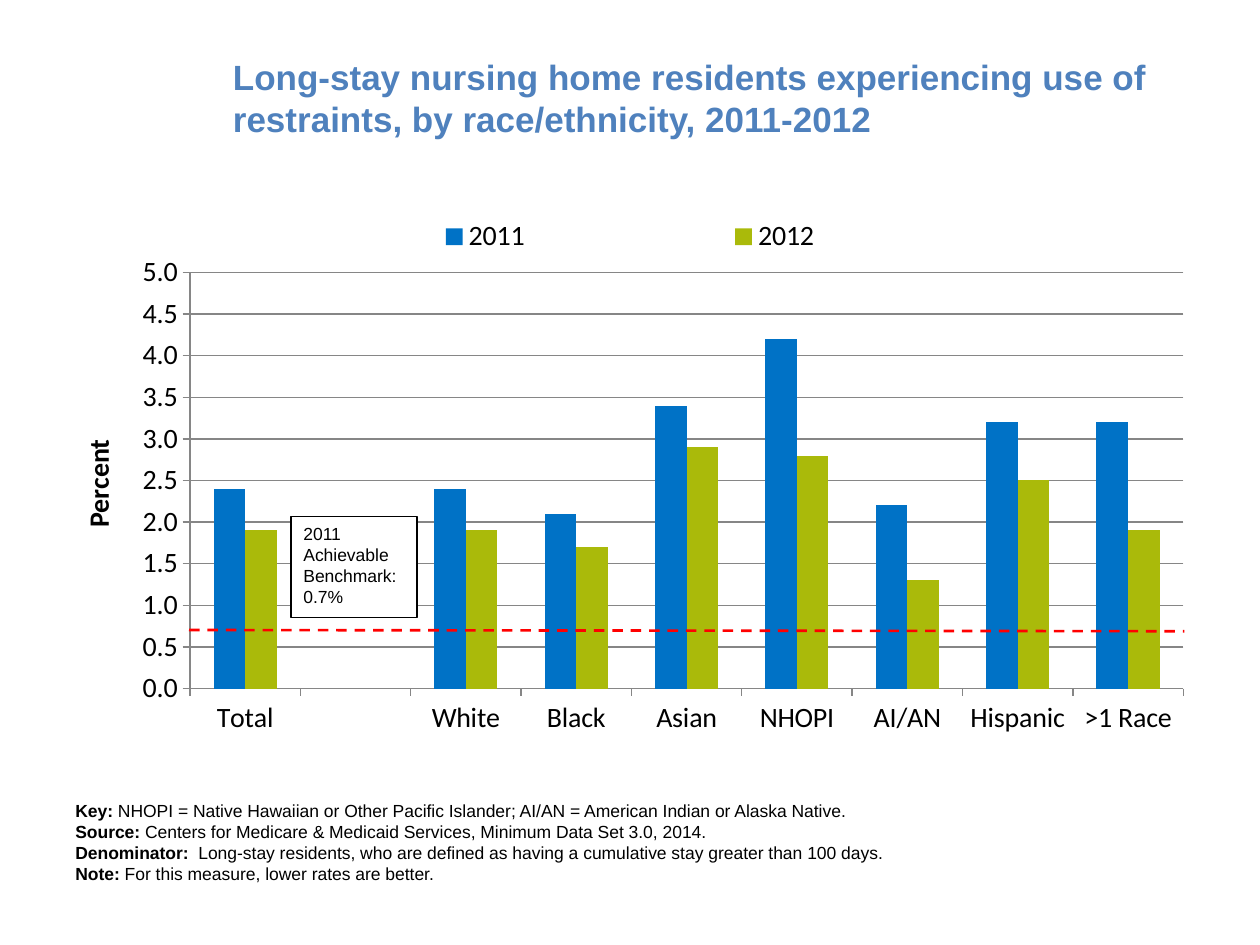
import dataclasses
import typing

import lxml.etree
import pptx
import pptx.chart.data
import pptx.dml.color
import pptx.enum.chart
import pptx.enum.dml
import pptx.enum.shapes
import pptx.enum.text
import pptx.oxml
import pptx.oxml.ns
import pptx.util

PX = 9144  # EMU per px, 100 px to the inch
COLORS = {
    "title": "4F81BD", "text": "000000", "paper": "FFFFFF", "grid": "868686",
    "2011": "0072C6", "2012": "AABA0A", "benchmark": "FF0000",
}
AXIS_FONT = {"name": "Calibri", "size": pptx.util.Pt(16), "bold": False}
TITLE_FONT = {"name": "Arial", "size": pptx.util.Pt(20), "bold": True}
NOTE_FONT = {"name": "Arial", "size": pptx.util.Pt(10), "bold": False}

CATEGORIES = ["Total", "", "White", "Black", "Asian", "NHOPI", "AI/AN", "Hispanic", ">1 Race"]
SERIES = {
    "2011": [2.4, None, 2.4, 2.1, 3.4, 4.2, 2.2, 3.2, 3.2],
    "2012": [1.9, None, 1.9, 1.7, 2.9, 2.8, 1.3, 2.5, 1.9],
}


@dataclasses.dataclass
class Area:
    left: int
    top: int
    width: int
    height: int

    def emu(self) -> list[int]:
        return [value * PX for value in dataclasses.astuple(self)]


@dataclasses.dataclass
class Note:
    label: str
    body: str


NOTES = [
    Note("Key:", " NHOPI = Native Hawaiian or Other Pacific Islander; "
         "AI/AN = American Indian or Alaska Native."),
    Note("Source: ", "Centers for Medicare & Medicaid Services, Minimum Data Set 3.0, 2014."),
    Note("Denominator:", "  Long-stay residents, who are defined as having "
         "a cumulative stay greater than 100 days."),
    Note("Note:", " For this measure, lower rates are better."),
]


def color(name: str) -> pptx.dml.color.RGBColor:
    return pptx.dml.color.RGBColor.from_string(COLORS[name])


def set_font(font: typing.Any, values: dict, color_name: str = "text") -> None:
    for key, value in values.items():
        setattr(font, key, value)
    font.color.rgb = color(color_name)


def set_line(line: typing.Any, color_name: str, points: float) -> None:
    line.color.rgb = color(color_name)
    line.width = pptx.util.Pt(points)


def add_span(para: typing.Any, text: str, values: dict, color_name: str = "text") -> None:
    span = para.add_run()
    span.text = text
    set_font(span.font, values, color_name)


def add_box(page: typing.Any, area: Area) -> typing.Any:
    box = page.shapes.add_textbox(*area.emu())
    box.text_frame.word_wrap = True
    return box


def make_layout(**places: float) -> typing.Any:
    """Manual chart layout, in fractions of the chart's size."""
    modes = {"xMode": "edge", "yMode": "edge"}
    if "w" in places:
        modes = {"layoutTarget": "inner", **modes}
    items = "".join(f'<c:{key} val="{value}"/>' for key, value in {**modes, **places}.items())
    return pptx.oxml.parse_xml(
        f'<c:layout {pptx.oxml.ns.nsdecls("c")}><c:manualLayout>{items}'
        "</c:manualLayout></c:layout>")


def place(element: typing.Any, layout: typing.Any, after: str = "") -> None:
    """Put the layout first in the element, or after the named child."""
    for old in element.findall(pptx.oxml.ns.qn("c:layout")):
        element.remove(old)
    if after:
        element.find(pptx.oxml.ns.qn(after)).addnext(layout)
    else:
        element.insert(0, layout)


def add_rates_chart(page: typing.Any, area: Area) -> None:
    data = pptx.chart.data.CategoryChartData(number_format="0.0")
    data.categories = CATEGORIES
    for name, values in SERIES.items():
        data.add_series(name, values)
    chart = page.shapes.add_chart(
        pptx.enum.chart.XL_CHART_TYPE.COLUMN_CLUSTERED, *area.emu(), data).chart
    set_font(chart.font, NOTE_FONT)
    chart.has_title = False

    # Columns
    plot = chart.plots[0]
    plot.gap_width = 150
    plot.overlap = 0
    plot.vary_by_categories = False
    for series in plot.series:
        series.format.fill.solid()
        series.format.fill.fore_color.rgb = color(series.name)
    place(chart.element.chart.plotArea, make_layout(x=0.112, y=0.131, w=0.876, h=0.768))

    # Legend
    chart.has_legend = True
    legend = chart.legend
    legend.position = pptx.enum.chart.XL_LEGEND_POSITION.TOP
    legend.include_in_layout = False
    set_font(legend.font, AXIS_FONT)
    legend_layout = make_layout(x=0.16, y=0.02, w=0.68, h=0.09)
    target = legend_layout[0].find(pptx.oxml.ns.qn("c:layoutTarget"))
    legend_layout[0].remove(target)
    place(legend._element, legend_layout, "c:legendPos")

    # Axes
    for axis in (chart.category_axis, chart.value_axis):
        set_font(axis.tick_labels.font, AXIS_FONT)
        set_line(axis.format.line, "grid", 0.75)
        axis.major_tick_mark = pptx.enum.chart.XL_TICK_MARK.OUTSIDE
        axis.minor_tick_mark = pptx.enum.chart.XL_TICK_MARK.NONE
    axis = chart.value_axis
    limits = {"minimum_scale": 0, "maximum_scale": 5, "major_unit": 0.5}
    for key, value in limits.items():
        setattr(axis, key, value)
    axis.tick_labels.number_format = "0.0"
    axis.tick_labels.number_format_is_linked = False
    axis.has_major_gridlines = True
    set_line(axis.major_gridlines.format.line, "grid", 0.75)
    para = axis.axis_title.text_frame.paragraphs[0]
    add_span(para, "Percent", {**AXIS_FONT, "bold": True})
    place(axis.axis_title._element, make_layout(x=0.01, y=0.43), "c:tx")


def add_benchmark(page: typing.Any, area: Area) -> None:
    box = page.shapes.add_shape(pptx.enum.shapes.MSO_SHAPE.RECTANGLE, *area.emu())
    box.shadow.inherit = False
    box.fill.solid()
    box.fill.fore_color.rgb = color("paper")
    set_line(box.line, "text", 0.75)
    box.text_frame.word_wrap = True
    box.text_frame.vertical_anchor = pptx.enum.text.MSO_ANCHOR.TOP
    para = box.text_frame.paragraphs[0]
    para.alignment = pptx.enum.text.PP_ALIGN.LEFT
    add_span(para, "2011 Achievable Benchmark: 0.7%", NOTE_FONT)

    # Dashed benchmark level across the plot
    ends = [value * PX for value in (150, 500, 940, 501)]
    level = page.shapes.add_connector(pptx.enum.shapes.MSO_CONNECTOR.STRAIGHT, *ends)
    set_line(level.line, "benchmark", 1.5)
    level.line.dash_style = pptx.enum.dml.MSO_LINE.DASH
    lxml.etree.SubElement(level._element.spPr, pptx.oxml.ns.qn("a:effectLst"))


def main() -> None:
    deck = pptx.Presentation()
    deck.slide_width, deck.slide_height = 1000 * PX, 750 * PX
    page = deck.slides.add_slide(deck.slide_layouts[6])

    # Title
    box = add_box(page, Area(175, 30, 775, 95))
    box.text_frame.vertical_anchor = pptx.enum.text.MSO_ANCHOR.MIDDLE
    add_span(box.text_frame.paragraphs[0],
             "Long-stay nursing home residents experiencing use of restraints, "
             "by race/ethnicity, 2011-2012", TITLE_FONT, "title")

    add_rates_chart(page, Area(50, 160, 900, 430))

    # Notes below the chart
    frame = add_box(page, Area(50, 630, 900, 77)).text_frame
    for index, note in enumerate(NOTES):
        para = frame.add_paragraph() if index else frame.paragraphs[0]
        add_span(para, note.label, {**NOTE_FONT, "bold": True})
        add_span(para, note.body, NOTE_FONT)

    add_benchmark(page, Area(231, 410, 100, 80))
    deck.save("out.pptx")


if __name__ == "__main__":
    main()
